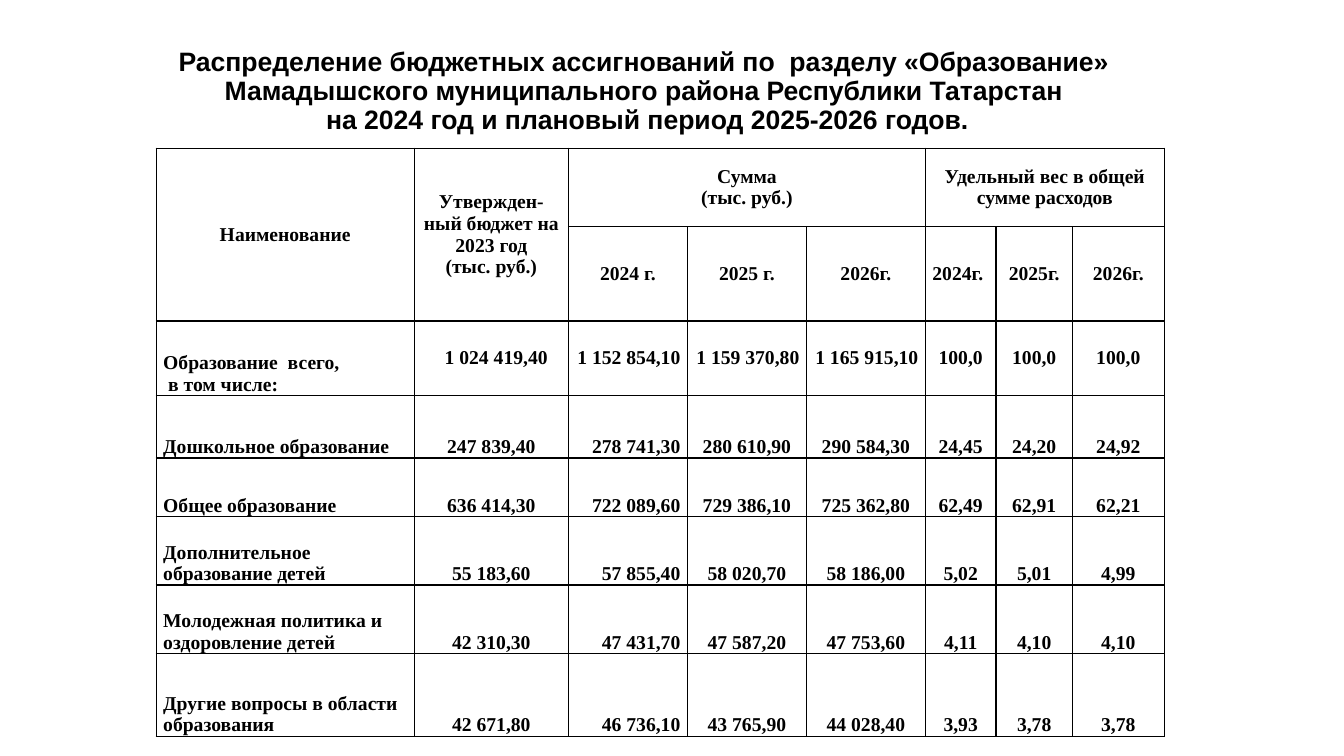
from lxml.etree import SubElement
from pptx import Presentation
from pptx.dml.color import RGBColor
from pptx.enum.text import MSO_ANCHOR, PP_ALIGN
from pptx.oxml.ns import qn
from pptx.util import Pt

INK = {"text": "000000", "line": "000000"}
ALIGN = {"l": PP_ALIGN.LEFT, "c": PP_ALIGN.CENTER, "r": PP_ALIGN.RIGHT}
TITLE = [
    "Распределение бюджетных ассигнований по  разделу «Образование»",
    "Мамадышского муниципального района Республики Татарстан",
    " на 2024 год и плановый период 2025-2026 годов.",
]
WIDTHS = [184.3, 110.2, 85, 85, 85, 50.4, 54.7, 65.5]
HEIGHTS = [56.2, 56.2, 53.3, 44.6, 41.8, 49, 49, 59]
SPANS = [(0, 0, 1, 0), (0, 1, 1, 1), (0, 2, 0, 4), (0, 5, 0, 7)]
ROWS = [
    ["Наименование", "Утвержден-ный бюджет на 2023 год\n(тыс. руб.)",
     "Сумма\n(тыс. руб.)", "", "", "Удельный вес в общей сумме расходов", "", ""],
    ["", "", "2024 г.", "2025 г.", "2026г.", "2024г.", "2025г.", "2026г."],
    ["Образование  всего,\n в том числе:", "1 024 419,40", "1 152 854,10",
     "1 159 370,80", "1 165 915,10", "100,0", "100,0", "100,0"],
    ["Дошкольное образование", "247 839,40", "278 741,30", "280 610,90",
     "290 584,30", "24,45", "24,20", "24,92"],
    ["Общее образование", "636 414,30", "722 089,60", "729 386,10",
     "725 362,80", "62,49", "62,91", "62,21"],
    ["Дополнительное образование детей", "55 183,60", "57 855,40", "58 020,70",
     "58 186,00", "5,02", "5,01", "4,99"],
    ["Молодежная политика и оздоровление детей", "42 310,30", "47 431,70",
     "47 587,20", "47 753,60", "4,11", "4,10", "4,10"],
    ["Другие вопросы в области образования", "42 671,80", "46 736,10",
     "43 765,90", "44 028,40", "3,93", "3,78", "3,78"],
]
SIDES = ["cccccccc", "ccccclcc", "lcrrrccc"] + ["lcrccccc"] * 5


def add_run(para, text, size, face):
    """Add one bold run to a paragraph."""
    run = para.add_run()
    run.text = text
    run.font.size = Pt(size)
    run.font.name = face
    run.font.bold = True
    run.font.color.rgb = RGBColor.from_string(INK["text"])


def add_title(slide, left, top, width, height):
    """Place the centred heading in its box."""
    frame = slide.shapes.add_textbox(Pt(left), Pt(top), Pt(width), Pt(height)).text_frame
    frame.word_wrap = True
    frame.vertical_anchor = MSO_ANCHOR.MIDDLE
    para = frame.paragraphs[0]
    para.alignment = PP_ALIGN.CENTER
    para.line_spacing = 0.9
    for i, line in enumerate(TITLE):
        if i:
            para.add_line_break()
        add_run(para, line, 19, "Arial")


def add_edges(cell):
    """Draw the four borders of a cell."""
    props = cell._tc.get_or_add_tcPr()
    for side in ("lnL", "lnR", "lnT", "lnB"):
        edge = SubElement(props, qn("a:" + side), w=str(Pt(1)))
        fill = SubElement(edge, qn("a:solidFill"))
        SubElement(fill, qn("a:srgbClr"), val=INK["line"])


def fill_cell(cell, text, side, anchor):
    """Style a cell and write its lines."""
    add_edges(cell)
    cell.fill.background()
    cell.margin_left = cell.margin_right = Pt(5)
    cell.margin_top = cell.margin_bottom = 0
    cell.vertical_anchor = anchor
    frame = cell.text_frame
    for i, line in enumerate(text.split("\n") if text else []):
        para = frame.add_paragraph() if i else frame.paragraphs[0]
        para.alignment = ALIGN[side]
        add_run(para, line, 14, "Times New Roman")


def add_budget(slide, left, top):
    """Place the budget table at the given corner."""
    table = slide.shapes.add_table(
        len(HEIGHTS), len(WIDTHS), Pt(left), Pt(top), Pt(sum(WIDTHS)), Pt(sum(HEIGHTS))
    ).table
    table.first_row = table.horz_banding = False
    for col, width in zip(table.columns, WIDTHS):
        col.width = Pt(width)
    for row, height in zip(table.rows, HEIGHTS):
        row.height = Pt(height)
    for r, row in enumerate(ROWS):
        for c, text in enumerate(row):
            low = r > 2 or (r == 2 and c == 0)
            anchor = MSO_ANCHOR.BOTTOM if low else MSO_ANCHOR.MIDDLE
            fill_cell(table.cell(r, c), text, SIDES[r][c], anchor)
    for r, c, last_r, last_c in SPANS:
        table.cell(r, c).merge(table.cell(last_r, last_c))
    total = table.cell(2, 1).text_frame.paragraphs[0]
    total._p.get_or_add_pPr().set("marL", str(Pt(7)))


def main():
    """Build and save the slide."""
    deck = Presentation()
    deck.slide_width, deck.slide_height = Pt(960), Pt(540)
    slide = deck.slides.add_slide(deck.slide_layouts[6])
    add_title(slide, 82.8, 26, 754, 79)
    add_budget(slide, 111.6, 105.8)
    deck.save("out.pptx")


if __name__ == "__main__":
    main()
